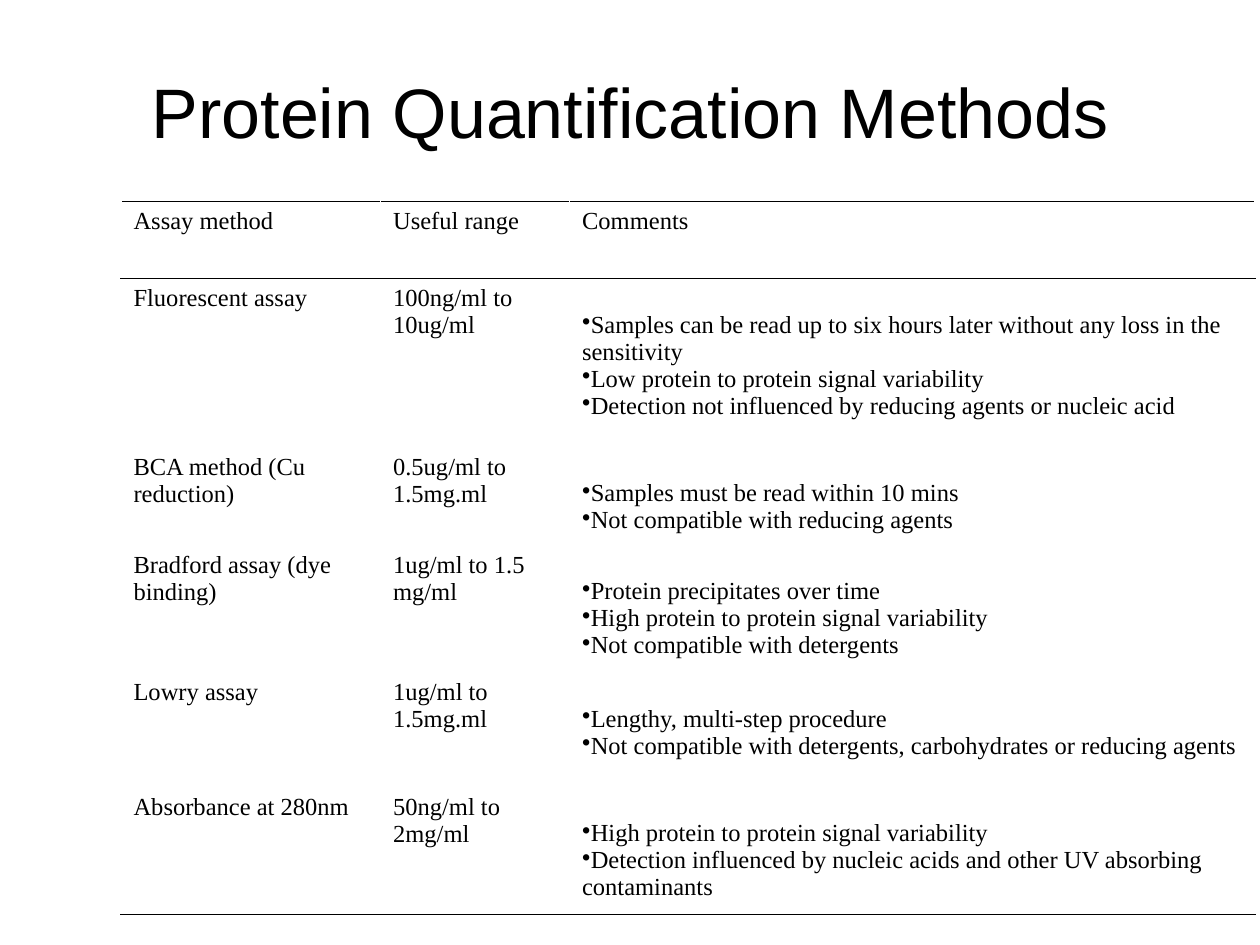
import lxml.etree
import pptx
import pptx.dml.color
import pptx.enum.text
import pptx.oxml.ns
import pptx.util

Inches = pptx.util.Inches
Pt = pptx.util.Pt
COLORS = {"ink": "000000"}
HEADINGS = ("Assay method", "Useful range", "Comments")
ASSAYS = [
    ("Fluorescent assay", "100ng/ml to 10ug/ml", [
        "Samples can be read up to six hours later without any loss in the sensitivity",
        "Low protein to protein signal variability",
        "Detection not influenced by reducing agents or nucleic acid"]),
    ("BCA method (Cu reduction)", "0.5ug/ml to 1.5mg.ml", [
        "Samples must be read within 10 mins",
        "Not compatible with reducing agents"]),
    ("Bradford assay (dye binding)", "1ug/ml to 1.5 mg/ml", [
        "Protein precipitates over time",
        "High protein to protein signal variability",
        "Not compatible with detergents"]),
    ("Lowry assay", "1ug/ml to 1.5mg.ml", [
        "Lengthy, multi-step procedure",
        "Not compatible with detergents, carbohydrates or reducing agents"]),
    ("Absorbance at 280nm", "50ng/ml to 2mg/ml", [
        "High protein to protein signal variability",
        "Detection influenced by nucleic acids and other UV absorbing contaminants"]),
]
COLUMN_WIDTHS = (2.06, 1.5, 5.44)
ROW_HEIGHTS = (0.61, 1.34, 0.73, 0.95, 0.91, 0.95)


def add_element(parent, tag, **attributes):
    """Append a DrawingML element to its parent."""
    return lxml.etree.SubElement(parent, pptx.oxml.ns.qn(tag), attributes)


def style_font(para, name, size):
    """Set the font of a whole paragraph."""
    para.font.name = name
    para.font.size = Pt(size)
    para.font.bold = False
    para.font.color.rgb = pptx.dml.color.RGBColor.from_string(COLORS["ink"])


def add_border(cell, tag):
    """Rule one edge of a cell."""
    line = add_element(cell._tc.get_or_add_tcPr(), tag, w=str(Pt(1)))
    fill = add_element(line, "a:solidFill")
    add_element(fill, "a:srgbClr", val=COLORS["ink"])


def fill_cell(cell, lines, bulleted=False):
    """Write one paragraph per line, with bullets if wanted."""
    frame = cell.text_frame
    for index, line in enumerate(lines):
        para = frame.add_paragraph() if index else frame.paragraphs[0]
        para.text = line
        if bulleted:
            add_element(para._p.get_or_add_pPr(), "a:buChar", char="•")
        style_font(para, "Times New Roman", 14)
    if bulleted:
        cell.margin_top = Inches(0.26)


def add_title(page, left, top, width, height):
    """Place the centred slide title in its box."""
    box = page.shapes.add_textbox(left, top, width, height)
    frame = box.text_frame
    frame.word_wrap = True
    frame.vertical_anchor = pptx.enum.text.MSO_ANCHOR.MIDDLE
    para = frame.paragraphs[0]
    para.text = "Protein Quantification Methods"
    para.alignment = pptx.enum.text.PP_ALIGN.CENTER
    style_font(para, "Arial", 40)


def add_assay_table(page, left, top, width, height):
    """Place the ruled table of assay methods in its box."""
    table = page.shapes.add_table(
        len(ROW_HEIGHTS), len(COLUMN_WIDTHS), left, top, width, height).table
    table.first_row = False
    table.horz_banding = False
    for column, share in zip(table.columns, COLUMN_WIDTHS):
        column.width = int(width * share / sum(COLUMN_WIDTHS))
    for row, share in zip(table.rows, ROW_HEIGHTS):
        row.height = int(height * share / sum(ROW_HEIGHTS))

    for cell, heading in zip(table.rows[0].cells, HEADINGS):
        fill_cell(cell, [heading])
        add_border(cell, "a:lnT")
        add_border(cell, "a:lnB")
    for row_index, (method, useful_range, comments) in enumerate(ASSAYS, 1):
        fill_cell(table.cell(row_index, 0), [method])
        fill_cell(table.cell(row_index, 1), [useful_range])
        fill_cell(table.cell(row_index, 2), comments, bulleted=True)
    for cell in table.rows[1].cells:
        add_border(cell, "a:lnT")
    for cell in table.rows[len(ASSAYS)].cells:
        add_border(cell, "a:lnB")
    for cell in table.iter_cells():
        cell.fill.background()


def main():
    """Build and save the slide."""
    deck = pptx.Presentation()
    deck.slide_width = Inches(10)
    deck.slide_height = Inches(7.5)
    page = deck.slides.add_slide(deck.slide_layouts[6])
    add_title(page, Inches(0.25), Inches(0.25), Inches(9.5), Inches(1.25))
    add_assay_table(page, Inches(0.96), Inches(1.6), Inches(9), Inches(5.49))
    deck.save("out.pptx")


if __name__ == "__main__":
    main()
